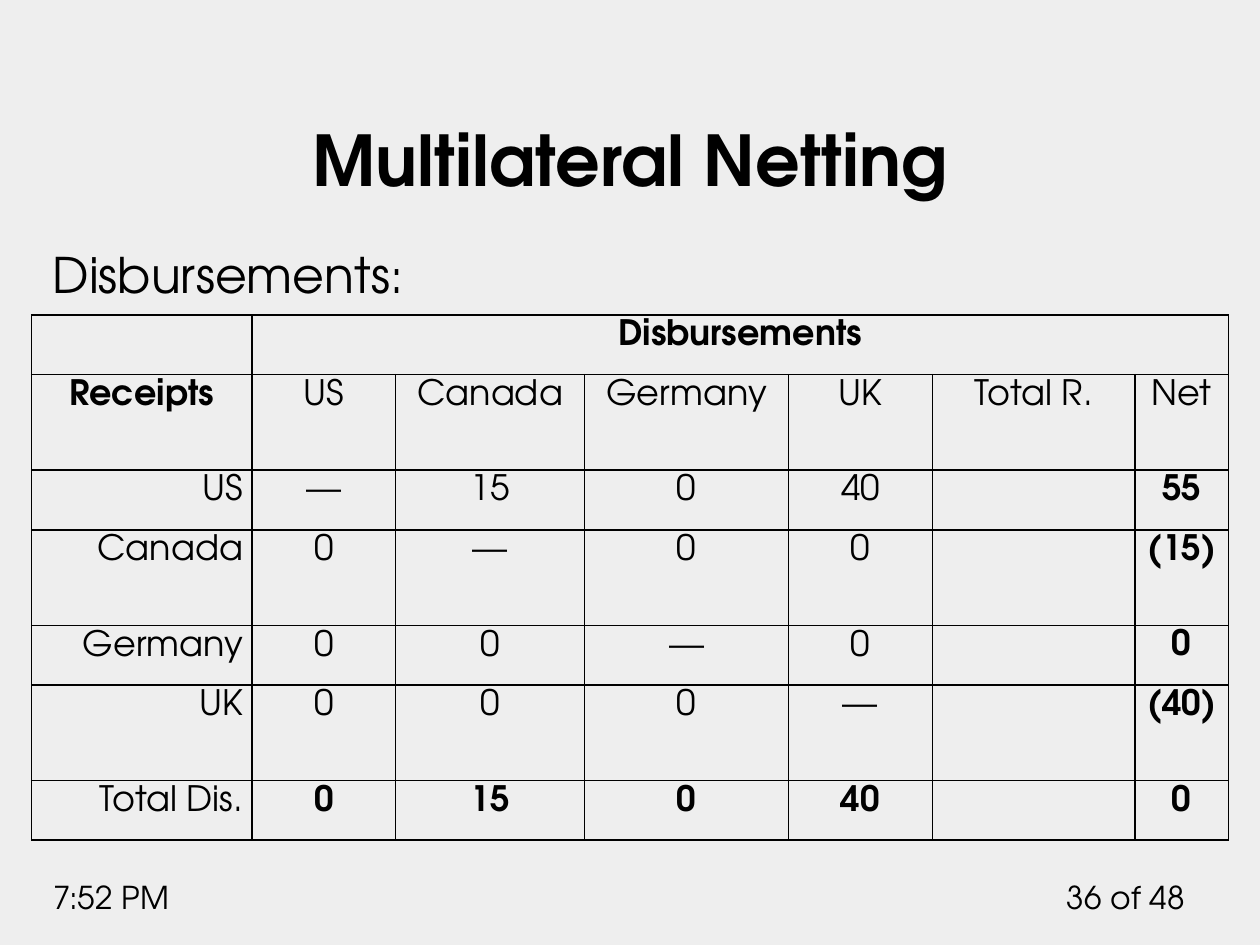
from dataclasses import dataclass

from lxml.etree import SubElement
from pptx import Presentation
from pptx.dml.color import RGBColor
from pptx.enum.text import MSO_ANCHOR, PP_ALIGN
from pptx.oxml.ns import qn
from pptx.slide import Slide
from pptx.table import _Cell
from pptx.util import Inches, Pt

COLORS = {"ground": "EEEEEE", "ink": "000000"}
TYPEFACE = "TeX Gyre Adventor"
GRID_COLUMNS, GRID_ROWS = 100, 75
SLIDE_WIDTH, SLIDE_HEIGHT = Inches(10), Inches(7.5)
LEFT, CENTER, RIGHT = PP_ALIGN.LEFT, PP_ALIGN.CENTER, PP_ALIGN.RIGHT
CELL_FORMAT = {
    "margin_left": Inches(0.07),
    "margin_right": Inches(0.07),
    "margin_top": 0,
    "margin_bottom": 0,
}


@dataclass
class Area:
    column: float
    row: float
    columns: float
    rows: float

    def box(self) -> tuple[int, int, int, int]:
        return (across(self.column), down(self.row),
                across(self.columns), down(self.rows))


@dataclass
class Caption:
    area: Area
    runs: list[tuple[str, float]]
    align: PP_ALIGN = LEFT
    bold: bool = False
    anchor: MSO_ANCHOR = MSO_ANCHOR.TOP
    hanging: float = 0


CAPTIONS = [
    Caption(Area(83.3, 69.2, 11.7, 4), [("36 of 48", 18)], RIGHT),
    Caption(Area(3.3, 69.2, 15.8, 4), [("7:52 PM", 18)]),
    Caption(Area(3.2, 18.9, 93.5, 5.3), [("Disbursements", 28), (":", 27)],
            hanging=3.8),
    Caption(Area(5, 3.9, 90, 12.5), [("Multilateral Netting", 40)],
            CENTER, True, MSO_ANCHOR.BOTTOM),
]
NETTING_AREA = Area(2.5, 25, 95, 41.7)
COLUMN_SPANS = [17.5, 11.4, 15, 16.2, 11.4, 16.1, 7.4]
SHORT_ROW, TALL_ROW = 4.74, 7.58
NETTING = [
    ["", "Disbursements", "", "", "", "", ""],
    ["Receipts", "US", "Canada", "Germany", "UK", "Total R.", "Net"],
    ["US", "—", "15", "0", "40", "", "55"],
    ["Canada", "0", "—", "0", "0", "", "(15)"],
    ["Germany", "0", "0", "—", "0", "", "0"],
    ["UK", "0", "0", "0", "—", "", "(40)"],
    ["Total Dis.", "0", "15", "0", "40", "", "0"],
]


def across(columns: float) -> int:
    return round(SLIDE_WIDTH * columns / GRID_COLUMNS)


def down(rows: float) -> int:
    return round(SLIDE_HEIGHT * rows / GRID_ROWS)


def style_font(font, size: float, bold: bool) -> None:
    for name, value in {"name": TYPEFACE, "size": Pt(size), "bold": bold}.items():
        setattr(font, name, value)
    font.color.rgb = RGBColor.from_string(COLORS["ink"])


def draw_caption(slide: Slide, caption: Caption) -> None:
    frame = slide.shapes.add_textbox(*caption.area.box()).text_frame
    frame.word_wrap = True
    frame.vertical_anchor = caption.anchor
    paragraph = frame.paragraphs[0]
    paragraph.alignment = caption.align
    if caption.hanging:
        indent = across(caption.hanging)
        properties = paragraph._p.get_or_add_pPr()
        properties.set("marL", str(indent))
        properties.set("indent", str(-indent))
    for words, size in caption.runs:
        run = paragraph.add_run()
        run.text = words
        style_font(run.font, size, caption.bold)


def draw_borders(cell: _Cell) -> None:
    properties = cell._tc.get_or_add_tcPr()
    for side in ("a:lnL", "a:lnR", "a:lnT", "a:lnB"):
        border = SubElement(properties, qn(side), w=str(Pt(1)))
        ink = SubElement(border, qn("a:solidFill"))
        SubElement(ink, qn("a:srgbClr"), val=COLORS["ink"])


def draw_cell(cell: _Cell, words: str, align: PP_ALIGN, bold: bool) -> None:
    for name, value in CELL_FORMAT.items():
        setattr(cell, name, value)
    draw_borders(cell)
    cell.fill.background()
    paragraph = cell.text_frame.paragraphs[0]
    paragraph.alignment = align
    paragraph.line_spacing = 1.15
    if words:
        run = paragraph.add_run()
        run.text = words
        style_font(run.font, 20, bold)


def draw_netting(slide: Slide) -> None:
    last_row, last_column = len(NETTING) - 1, len(COLUMN_SPANS) - 1
    table = slide.shapes.add_table(
        len(NETTING), len(COLUMN_SPANS), *NETTING_AREA.box()).table
    table.first_row = table.horz_banding = False
    for column, span in zip(table.columns, COLUMN_SPANS):
        column.width = across(span)
    for r, entries in enumerate(NETTING):
        table.rows[r].height = down(TALL_ROW if r % 2 else SHORT_ROW)
        for c, words in enumerate(entries):
            heading = r == 0 or (r, c) == (1, 0)
            total = r > 1 and c > 0 and (r == last_row or c == last_column)
            align = RIGHT if r > 1 and c == 0 else CENTER
            draw_cell(table.cell(r, c), words, align, heading or total)
    table.cell(0, 1).merge(table.cell(0, last_column))


def main() -> None:
    deck = Presentation()
    deck.slide_width, deck.slide_height = SLIDE_WIDTH, SLIDE_HEIGHT
    slide = deck.slides.add_slide(deck.slide_layouts[6])
    ground = slide.background.fill
    ground.solid()
    ground.fore_color.rgb = RGBColor.from_string(COLORS["ground"])
    for caption in CAPTIONS:
        draw_caption(slide, caption)
    draw_netting(slide)
    deck.save("out.pptx")


if __name__ == "__main__":
    main()
